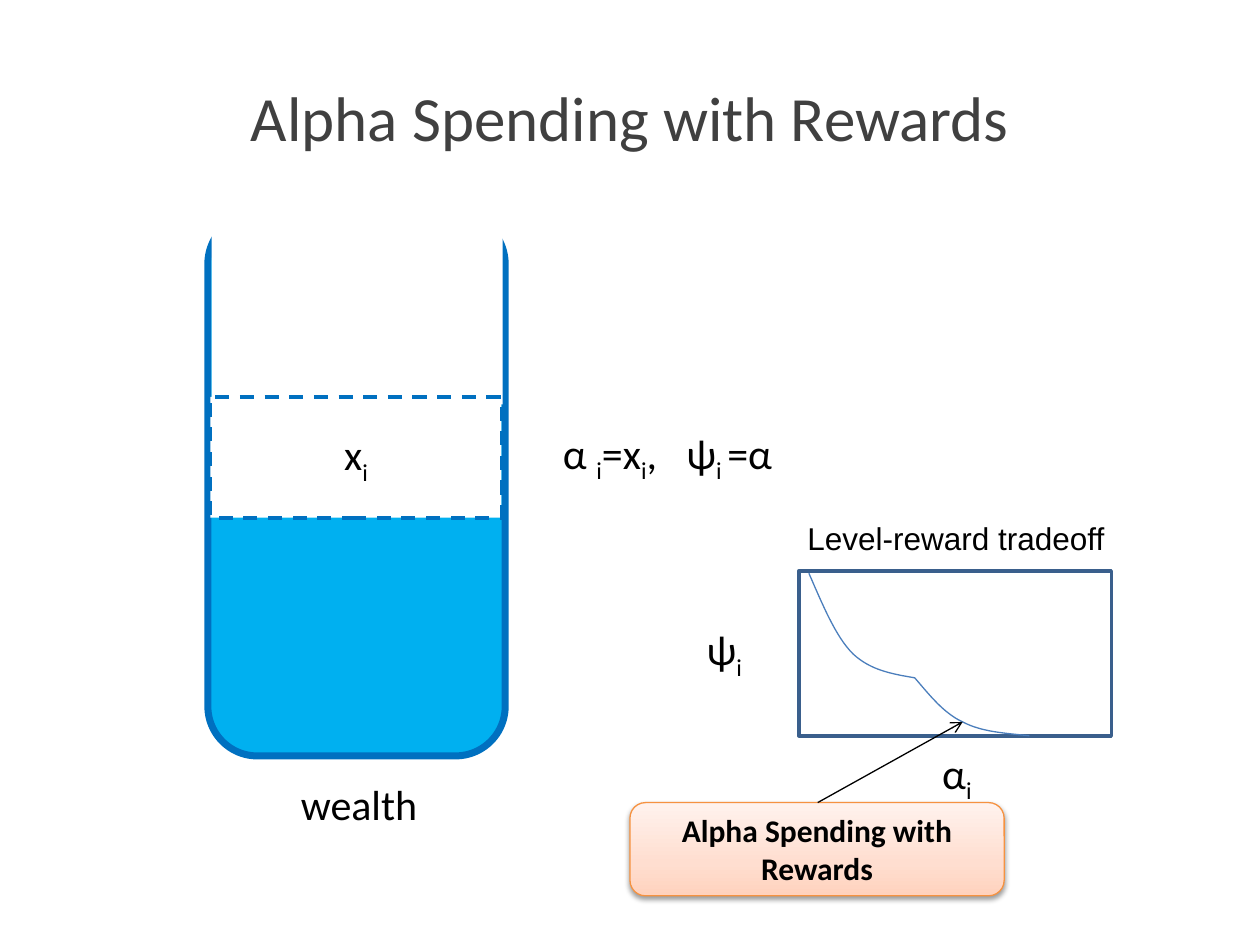
from copy import deepcopy

from lxml.etree import SubElement
from pptx import Presentation
from pptx.dml.color import RGBColor
from pptx.enum.dml import MSO_LINE
from pptx.enum.shapes import MSO_CONNECTOR, MSO_SHAPE
from pptx.enum.text import MSO_ANCHOR, MSO_AUTO_SIZE, PP_ALIGN
from pptx.oxml.ns import qn
from pptx.util import Inches, Pt

COLORS = {
    "title": "404040",
    "text": "000000",
    "paper": "FFFFFF",
    "wealth": "00B0F0",
    "glass": "0070C0",
    "frame": "3A5F8C",
    "curve": "4B7EBC",
    "callout": "F69240",
}
CALLOUT_STOPS = [(0, "FFD2BD"), (0.35, "FFDED0"), (1, "FFF2ED")]


class SlideBuilder:
    """Holds the style and the current slide."""

    font = "Calibri"
    size = 24

    def __init__(self, page):
        self.page = page

    def color(self, name):
        """Return a named colour, or a hex string as it is."""
        return RGBColor.from_string(COLORS.get(name, name))

    def outline(self, item, color, width, dash=None):
        """Set the line of a shape or connector."""
        item.line.color.rgb = self.color(color)
        item.line.width = Pt(width)
        if dash:
            item.line.dash_style = dash

    def add_runs(self, item, runs, size=None, font=None, color="text", bold=False, center=True):
        """Put (text, is_subscript) runs into the first paragraph."""
        frame = item.text_frame
        frame.word_wrap = True
        if center:
            frame.vertical_anchor = MSO_ANCHOR.MIDDLE
        para = frame.paragraphs[0]
        para.alignment = PP_ALIGN.CENTER if center else PP_ALIGN.LEFT
        for text, subscript in runs:
            span = para.add_run()
            span.text = text
            span.font.name = font or self.font
            span.font.size = Pt(size or self.size)
            span.font.bold = bold
            span.font.color.rgb = self.color(color)
            if subscript:
                span.font._element.set("baseline", "-25000")

    def text(self, place, runs, wrap=False, tab=None, **style):
        """Add a text box that fits its text."""
        box = self.page.shapes.add_textbox(*map(Inches, place))
        self.add_runs(box, runs, **style)
        box.text_frame.word_wrap = wrap
        box.text_frame.auto_size = MSO_AUTO_SIZE.SHAPE_TO_FIT_TEXT
        if tab:
            stops = SubElement(box.text_frame.paragraphs[0]._p.get_or_add_pPr(), qn("a:tabLst"))
            SubElement(stops, qn("a:tab"), pos=str(Inches(tab)), algn="l")
        return box

    def shape(self, kind, place, fill=None, line=None, width=1, dash=None):
        """Add a preset shape with a plain fill and line."""
        shape = self.page.shapes.add_shape(kind, *map(Inches, place))
        shape.shadow.inherit = False
        if fill:
            shape.fill.solid()
            shape.fill.fore_color.rgb = self.color(fill)
        else:
            shape.fill.background()
        if line:
            self.outline(shape, line, width, dash)
        else:
            shape.line.fill.background()
        return shape

    def callout(self, place, runs, **style):
        """Add a rounded box with a gradient and a soft shadow."""
        box = self.shape(MSO_SHAPE.ROUNDED_RECTANGLE, place, line="callout", width=0.75)
        box.fill.gradient()
        box.fill.gradient_angle = 90
        properties = box._element.spPr
        stop_list = properties.find(qn("a:gradFill")).find(qn("a:gsLst"))
        stop_list.append(deepcopy(stop_list[0]))
        for stop, (position, color) in zip(box.fill.gradient_stops, CALLOUT_STOPS):
            stop.position = position
            stop.color.rgb = self.color(color)
        shadow = SubElement(
            properties.find(qn("a:effectLst")), qn("a:outerShdw"),
            blurRad=str(Pt(3.1)), dist=str(Pt(1.6)), dir="5400000", rotWithShape="0",
        )
        tone = SubElement(shadow, qn("a:srgbClr"), val=COLORS["text"])
        SubElement(tone, qn("a:alpha"), val="38000")
        self.add_runs(box, runs, **style)

    def curve(self, start, *beziers, steps=16):
        """Add an open outline through cubic Bezier pieces."""
        points, origin = [], start
        for bezier in beziers:
            controls = (origin, *bezier)
            for step in range(1, steps + 1):
                t = step / steps
                weights = ((1 - t) ** 3, 3 * t * (1 - t) ** 2, 3 * t ** 2 * (1 - t), t ** 3)
                points.append(tuple(
                    Inches(sum(w * c[axis] for w, c in zip(weights, controls))) for axis in (0, 1)
                ))
            origin = bezier[-1]
        builder = self.page.shapes.build_freeform(*map(Inches, start))
        builder.add_line_segments(points, close=False)
        curve = builder.convert_to_shape()
        curve.shadow.inherit = False
        curve.fill.background()
        self.outline(curve, "curve", 0.75)

    def arrow(self, start, end):
        """Add a thin line with an open arrowhead at its end."""
        arrow = self.page.shapes.add_connector(MSO_CONNECTOR.STRAIGHT, *map(Inches, start + end))
        self.outline(arrow, "text", 0.75)
        SubElement(arrow.line._get_or_add_ln(), qn("a:tailEnd"), type="arrow")
        SubElement(arrow._element.spPr, qn("a:effectLst"))


def main():
    """Build and save the slide."""
    deck = Presentation()
    deck.slide_width, deck.slide_height = Inches(10), Inches(7.5)
    slide = SlideBuilder(deck.slides.add_slide(deck.slide_layouts[6]))
    heading = [("Alpha Spending with Rewards", False)]
    index = ("i", True)

    title = slide.text((0.5, 0.3, 9, 1.25), heading, wrap=True, size=36, color="title")
    title.text_frame.auto_size = MSO_AUTO_SIZE.NONE

    slide.shape(MSO_SHAPE.ROUNDED_RECTANGLE, (1.65, 1.7, 2.36, 4.3), "wealth", "glass", 4)
    slide.shape(MSO_SHAPE.RECTANGLE, (1.68, 1.38, 2.31, 1.83), "paper")
    slide.text((2.29, 6.13, 1.14, 0.51), [("wealth", False)], center=False)
    spent = slide.shape(
        MSO_SHAPE.RECTANGLE, (1.67, 3.15, 2.31, 0.96), "paper", "glass", 2, MSO_LINE.DASH
    )
    slide.add_runs(spent, [("x", False), index])

    slide.shape(MSO_SHAPE.RECTANGLE, (6.34, 4.53, 2.48, 1.31), line="frame", width=2)
    slide.curve(
        (6.42, 4.55),
        ((6.53, 4.8), (6.63, 5.05), (6.77, 5.19)),
        ((6.91, 5.32), (7.08, 5.35), (7.26, 5.38)),
    )
    slide.curve(
        (7.26, 5.38),
        ((7.38, 5.52), (7.49, 5.66), (7.64, 5.73)),
        ((7.79, 5.81), (7.98, 5.82), (8.17, 5.84)),
    )
    slide.text((7.38, 5.88, 0.44, 0.51), [("α", False), index], center=False)
    slide.text((5.51, 4.9, 0.49, 0.5), [("ψ", False), index], center=False)

    slide.callout((5, 6.37, 2.97, 0.74), heading, size=18, bold=True)
    slide.arrow((6.49, 6.37), (7.64, 5.73))

    rule = [("α ", False), index, ("=x", False), index, (",\tψ", False), ("i ", True), ("=α", False)]
    slide.text((4.37, 3.34, 1.94, 0.5), rule, wrap=True, tab=0.98, center=False)
    slide.text(
        (6.31, 4.07, 2.91, 0.4), [("Level-reward tradeoff", False)],
        wrap=True, size=18, font="Arial", center=False,
    )
    deck.save("out.pptx")


if __name__ == "__main__":
    main()
